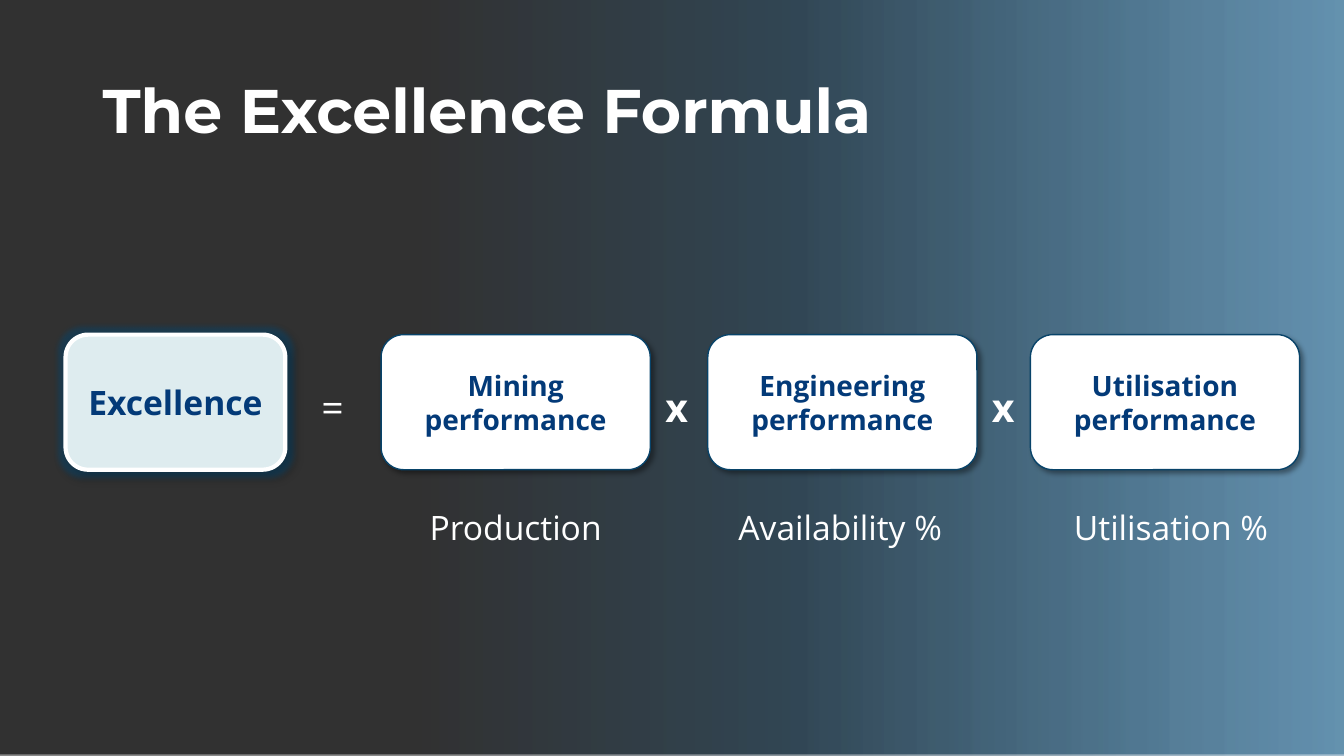
from dataclasses import dataclass

from lxml import etree
from pptx import Presentation
from pptx.dml.color import RGBColor as Rgb
from pptx.enum.shapes import MSO_SHAPE as Shape
from pptx.enum.text import MSO_ANCHOR as Anchor, MSO_AUTO_SIZE as AutoSize, PP_ALIGN as Align
from pptx.oxml.ns import qn
from pptx.util import Inches, Pt


@dataclass(frozen=True)
class Theme:
    heading_font: str = "Montserrat"
    body_font: str = "Open Sans"
    white: str = "FFFFFF"
    navy: str = "033A78"
    border: str = "084369"
    pale: str = "DEECEF"
    shadow: str = "000000"
    glow: str = "014F80"
    # Position, colour and opacity, in percent
    backdrop: tuple = ((30, "000000", 80), (59, "001B2D", 80), (100, "014F80", 60))
    title_size: int = 44
    operator_size: int = 28
    large_size: int = 24
    factor_size: int = 20


class FormulaSlide:
    def __init__(self, deck, theme):
        self.theme = theme
        self.page = deck.slides.add_slide(deck.slide_layouts[6])

    def add_color(self, parent, color, opacity):
        node = etree.SubElement(parent, qn("a:srgbClr"), val=color)
        etree.SubElement(node, qn("a:alpha"), val=str(opacity * 1000))

    def backdrop(self, left, top, width, height):
        box = self.page.shapes.add_shape(
            Shape.RECTANGLE, Inches(left), Inches(top), Inches(width), Inches(height))
        box.shadow.inherit = False
        box.line.fill.background()
        box.fill.gradient()
        box.fill.gradient_angle = 0
        stops = box._element.spPr.find(qn("a:gradFill")).find(qn("a:gsLst"))
        for stop in list(stops):
            stops.remove(stop)
        for position, color, opacity in self.theme.backdrop:
            stop = etree.SubElement(stops, qn("a:gs"), pos=str(position * 1000))
            self.add_color(stop, color, opacity)

    def add_span(self, para, text, size, color, bold=False, font=None):
        span = para.add_run()
        span.text = text
        span.font.name = font or self.theme.body_font
        span.font.size = Pt(size)
        span.font.bold = bold
        span.font.color.rgb = Rgb.from_string(color)

    def card(self, text, left, width, size, fill, border, border_width, glow=False):
        box = self.page.shapes.add_shape(
            Shape.ROUNDED_RECTANGLE, Inches(left), Inches(3.32), Inches(width), Inches(1.34))
        box.fill.solid()
        box.fill.fore_color.rgb = Rgb.from_string(fill)
        box.line.color.rgb = Rgb.from_string(border)
        box.line.width = Pt(border_width)
        box.shadow.inherit = False
        effects = box._element.spPr.find(qn("a:effectLst"))
        if glow:
            halo = etree.SubElement(effects, qn("a:glow"), rad=str(Pt(8)))
            self.add_color(halo, self.theme.glow, 40)
        shadow = etree.SubElement(
            effects, qn("a:outerShdw"), blurRad=str(Pt(4)), dist=str(Pt(3)),
            dir=str(45 * 60000), algn="tl", rotWithShape="0")
        self.add_color(shadow, self.theme.shadow, 40)
        frame = box.text_frame
        frame.word_wrap = True
        frame.vertical_anchor = Anchor.MIDDLE
        para = frame.paragraphs[0]
        para.alignment = Align.CENTER
        self.add_span(para, text, size, self.theme.navy, bold=True)

    def text(self, text, left, top, width, height, size, bold=False, align=Align.LEFT,
             wrap=True, grow=True, anchor=Anchor.TOP, font=None, spacing=None):
        box = self.page.shapes.add_textbox(
            Inches(left), Inches(top), Inches(width), Inches(height))
        frame = box.text_frame
        frame.word_wrap = wrap
        frame.auto_size = AutoSize.SHAPE_TO_FIT_TEXT if grow else AutoSize.NONE
        frame.vertical_anchor = anchor
        para = frame.paragraphs[0]
        para.alignment = align
        para.line_spacing = spacing
        self.add_span(para, text, size, self.theme.white, bold, font)

    def operator(self, symbol, left, bold=False):
        self.text(symbol, left, 3.75, 0.43, 0.57, self.theme.operator_size, bold, wrap=False)


def main():
    deck = Presentation()
    deck.slide_width, deck.slide_height = Inches(13.33), Inches(7.5)
    theme = Theme()
    slide = FormulaSlide(deck, theme)

    # Backdrop and title
    slide.backdrop(0, -0.24, 13.49, 7.74)
    slide.text("The Excellence Formula", 0.92, 0.4, 11.5, 1.45, theme.title_size, bold=True,
               grow=False, anchor=Anchor.MIDDLE, font=theme.heading_font, spacing=0.9)

    # Result of the formula
    slide.card("Excellence", 0.65, 2.18, theme.large_size, theme.pale, theme.white, 3, glow=True)
    slide.operator("=", 3.09)

    # Factors with their measures: card left, measure left
    factor_width = 2.67
    factors = (
        ("Mining performance", 3.78, "Production", 3.78),
        ("Engineering performance", 7.02, "Availability %", 7),
        ("Utilisation performance", 10.22, "Utilisation %", 10.28),
    )
    for factor, left, measure, measure_left in factors:
        slide.card(factor, left, factor_width, theme.factor_size, theme.white, theme.border, 1)
        slide.text(measure, measure_left, 4.98, factor_width, 0.5, theme.large_size,
                   align=Align.CENTER)

    # Multiplication signs after all but the last factor
    for _, left, _, _ in factors[:-1]:
        slide.operator("x", left + factor_width + 0.05, bold=True)

    deck.save("out.pptx")


if __name__ == "__main__":
    main()
